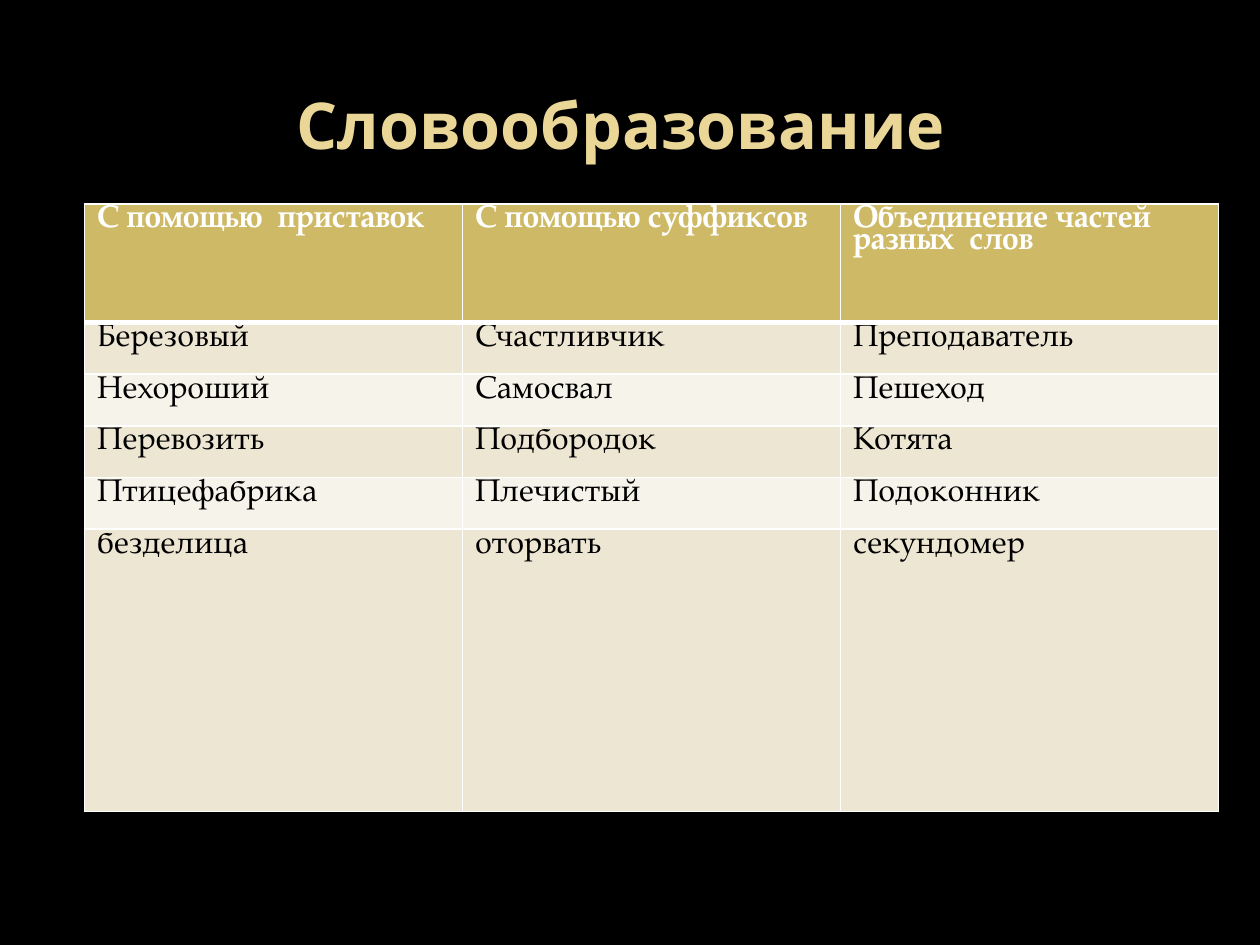
from dataclasses import dataclass

from lxml import etree
from pptx import Presentation
from pptx.dml.color import RGBColor
from pptx.enum import text
from pptx.oxml import ns
from pptx.util import Inches, Pt

BLACK = RGBColor(0x00, 0x00, 0x00)
WHITE = RGBColor(0xFF, 0xFF, 0xFF)
PALE_GOLD = RGBColor(0xEA, 0xD6, 0x96)
GOLD = RGBColor(0xCE, 0xB9, 0x66)
SAND = RGBColor(0xED, 0xE6, 0xD3)
IVORY = RGBColor(0xF6, 0xF3, 0xEA)


@dataclass(frozen=True)
class RowStyle:
    fill: RGBColor
    color: RGBColor
    bold: bool = False
    bottom_width: float = 1


@dataclass(frozen=True)
class WordRow:
    height: float
    words: tuple[str, str, str]
    style: RowStyle


HEADER = RowStyle(GOLD, WHITE, True, 3)
ODD = RowStyle(SAND, BLACK)
EVEN = RowStyle(IVORY, BLACK)

ROWS = [
    WordRow(0.94, ("С помощью  приставок", "С помощью суффиксов", "Объединение частей разных  слов"), HEADER),
    WordRow(0.41, ("Березовый", "Счастливчик", "Преподаватель"), ODD),
    WordRow(0.41, ("Нехороший", "Самосвал", "Пешеход"), EVEN),
    WordRow(0.41, ("Перевозить", "Подбородок", "Котята"), ODD),
    WordRow(0.41, ("Птицефабрика", "Плечистый", "Подоконник"), EVEN),
    WordRow(2.24, ("безделица", "оторвать", "секундомер"), ODD),
]
COLUMN_WIDTH = 3


def set_borders(cell, top_width: float, bottom_width: float) -> None:
    properties = cell._tc.get_or_add_tcPr()
    widths = {"lnL": 1, "lnR": 1, "lnT": top_width, "lnB": bottom_width}
    for index, (side, width) in enumerate(widths.items()):
        line = etree.Element(ns.qn(f"a:{side}"), w=str(Pt(width)))
        fill = etree.SubElement(line, ns.qn("a:solidFill"))
        etree.SubElement(fill, ns.qn("a:srgbClr"), val=str(WHITE))
        properties.insert(index, line)


def write_cell(cell, word: str, style: RowStyle, top_width: float) -> None:
    cell.fill.solid()
    cell.fill.fore_color.rgb = style.fill
    cell.text = word
    para = cell.text_frame.paragraphs[0]
    para.line_spacing = 0.7
    para.font.name = "TeX Gyre Pagella"
    para.font.size = Pt(18)
    para.font.bold = style.bold
    para.font.color.rgb = style.color
    set_borders(cell, top_width, style.bottom_width)


def add_title(page, title: str) -> None:
    box = page.shapes.title
    box.left, box.top = Inches(0.43), Inches(0.36)
    box.width, box.height = Inches(9), Inches(1.25)
    box.text_frame.text = title
    box.text_frame.vertical_anchor = text.MSO_ANCHOR.MIDDLE
    para = box.text_frame.paragraphs[0]
    para.alignment = text.PP_ALIGN.CENTER
    para.font.name = "Open Sans"
    para.font.size = Pt(36.9)
    para.font.bold = True
    para.font.color.rgb = PALE_GOLD


def add_word_table(page, rows: list[WordRow]) -> None:
    column_count = len(rows[0].words)
    table = page.shapes.add_table(
        len(rows), column_count, Inches(0.67), Inches(1.62),
        Inches(COLUMN_WIDTH * column_count), Inches(sum(row.height for row in rows)),
    ).table
    for column in table.columns:
        column.width = Inches(COLUMN_WIDTH)
    top_width = 1
    for index, row in enumerate(rows):
        table.rows[index].height = Inches(row.height)
        for column_index, word in enumerate(row.words):
            write_cell(table.cell(index, column_index), word, row.style, top_width)
        top_width = row.style.bottom_width


def main() -> None:
    deck = Presentation()
    deck.slide_width, deck.slide_height = Inches(10), Inches(7.5)
    page = deck.slides.add_slide(deck.slide_layouts[5])
    page.background.fill.solid()
    page.background.fill.fore_color.rgb = BLACK
    add_title(page, "Словообразование")
    add_word_table(page, ROWS)
    deck.save("out.pptx")


if __name__ == "__main__":
    main()
